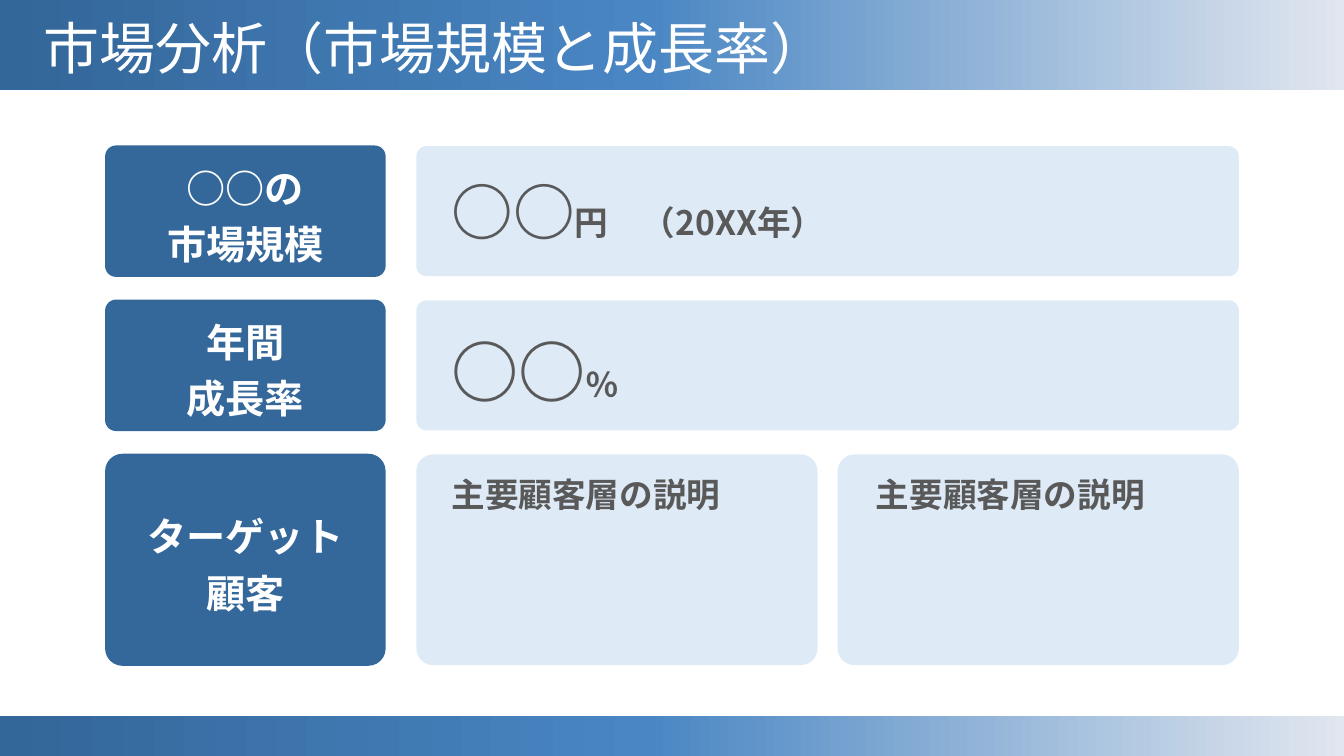
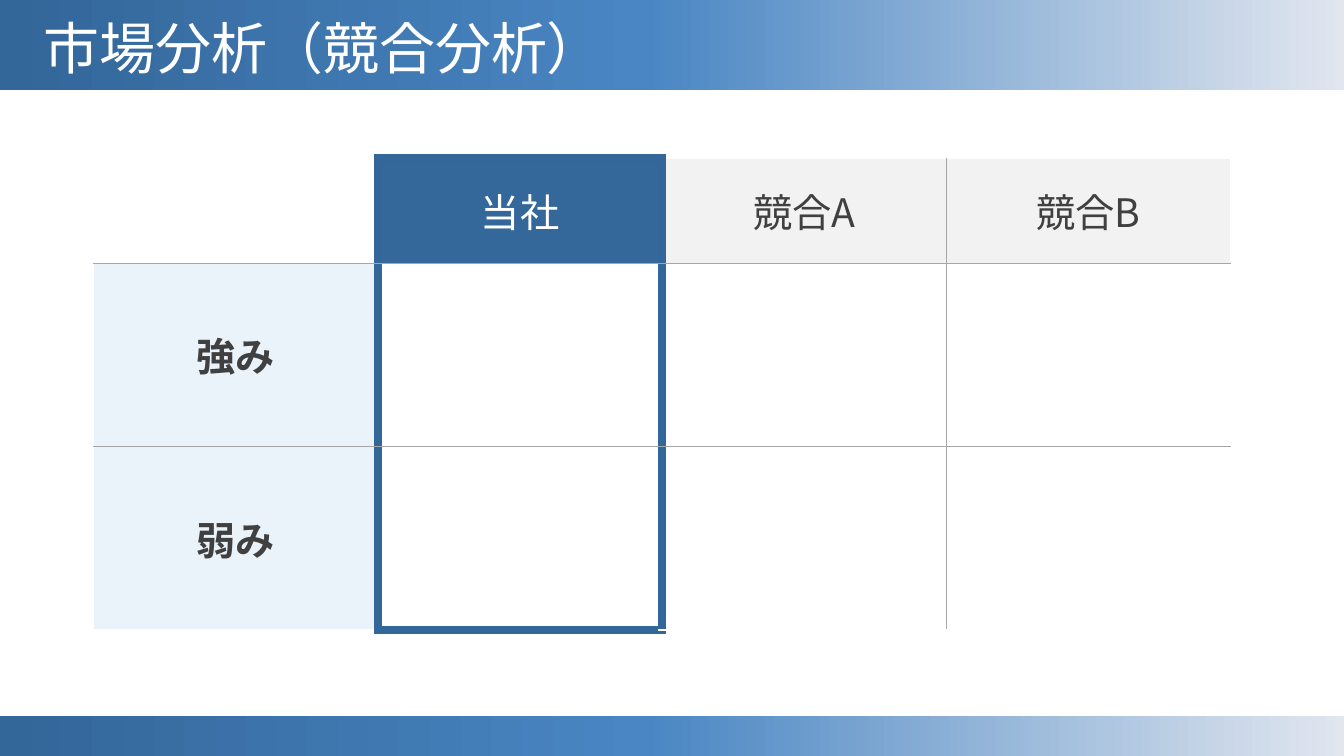
from dataclasses import dataclass
from typing import Any

from lxml.etree import SubElement
from pptx import Presentation
from pptx.dml.color import RGBColor as Rgb
from pptx.enum.lang import MSO_LANGUAGE_ID as Lang
from pptx.enum.shapes import MSO_SHAPE as Form
from pptx.enum.text import MSO_ANCHOR as Anchor, MSO_AUTO_SIZE as Fit, PP_ALIGN as Align
from pptx.oxml.ns import qn
from pptx.shapes.autoshape import Shape
from pptx.slide import Slide
from pptx.table import _Cell as Cell
from pptx.text.text import TextFrame as Frame
from pptx.util import Pt


@dataclass(frozen=True)
class Theme:
    navy: str = "34679A"
    edge: str = "336699"
    pale: str = "DEEBF7"
    tint: str = "EBF3FA"
    mist: str = "F2F2F2"
    white: str = "FFFFFF"
    rule: str = "A6A6A6"
    dark: str = "404040"
    gray: str = "595959"
    fade: tuple[tuple[int, str], ...] = ((0, "336699"), (48, "4986C3"), (100, "E1E6EF"))
    font: str = "Noto Sans CJK JP"
    latin: str = "Montserrat"
    title: int = 40
    label: int = 28
    note: int = 24
    round: float = 0.079


@dataclass(frozen=True)
class Box:
    left: float
    top: float
    width: float
    height: float

    def span(self) -> tuple[int, ...]:
        return tuple(Pt(n) for n in (self.left, self.top, self.width, self.height))


@dataclass(frozen=True)
class Run:
    text: str
    size: int
    color: str
    bold: bool = True
    font: str = Theme.font


@dataclass(frozen=True)
class Note:
    box: Box
    runs: tuple[Run, ...]


@dataclass(frozen=True)
class Row:
    lines: tuple[str, ...]
    height: float
    panes: int
    notes: tuple[Note, ...]


@dataclass(frozen=True)
class Edge:
    color: str
    width: float = 1


T = Theme()
PAGE = Box(0, 0, 960, 540)
BANDS = (Box(0, 0, 960, 64), Box(0, 511.2, 960, 28.8))
HEAD = Box(24, 11, 828, 52)
LABEL_X, LABEL_W = 75.6, 199.4
PANE_X, PANE_W, PANE_GAP = 297.4, 587.5, 14.4
ROW_Y, ROW_GAP = 104.4, 17.2
NOTE_X = PANE_X + 18
HALF = (PANE_W - PANE_GAP) / 2
HINT = (Run("主要顧客層の説明", T.note, T.gray),)
ROWS = (
    Row(("○○の", "市場規模"), 92.9, 1, (
        Note(Box(NOTE_X, 120.2, 445.7, 60.5),
             (Run("○○", 44, T.gray), Run("円　（20XX年）", T.note, T.gray))),)),
    Row(("年間", "成長率"), 92.9, 1, (
        Note(Box(NOTE_X, 231.8, 316, 65.5),
             (Run("○○", 48, T.gray, font=T.latin),
              Run("％", T.note, T.gray, font=T.latin))),)),
    Row(("ターゲット", "顧客"), 150.5, 2, tuple(
        Note(Box(NOTE_X + i * (HALF + PANE_GAP + 2.2), 334.8, 255, 36), HINT)
        for i in range(2))),
)
GRID = Box(67, 113, 812, 337)
TALL = (75, 131, 131)
WORDS = (("", "当社", "競合A", "競合B"), ("強み", "", "", ""), ("弱み", "", "", ""))
THICK, THIN, BARE = Edge(T.edge, 6), Edge(T.rule), Edge(T.white)
UPRIGHT = (BARE, THICK, THICK, THIN, BARE)
LEVEL = (BARE, THIN, THIN, BARE)
OWN = (THICK, THIN, THIN, THICK)


def put(item: Any, look: dict[str, Any]) -> None:
    for name, value in look.items():
        setattr(item, name, value)


def paint(item: Any, color: str) -> None:
    item.fill.solid()
    item.fill.fore_color.rgb = Rgb.from_string(color)


def write(frame: Frame, lines: tuple[tuple[Run, ...], ...], look: dict[str, Any]) -> None:
    for i, line in enumerate(lines):
        para = frame.add_paragraph() if i else frame.paragraphs[0]
        put(para, look)
        for part in line:
            run = para.add_run()
            run.text = part.text
            put(run.font, {"size": Pt(part.size), "bold": part.bold, "name": part.font,
                           "language_id": Lang.JAPANESE})
            run.font.color.rgb = Rgb.from_string(part.color)
            SubElement(run._r.get_or_add_rPr(), qn("a:ea"), typeface=T.font)


def add_text(slide: Slide, box: Box, runs: tuple[Run, ...], look: dict[str, Any]) -> None:
    frame = slide.shapes.add_textbox(*box.span()).text_frame
    put(frame, {"word_wrap": True, "auto_size": Fit.SHAPE_TO_FIT_TEXT,
                "vertical_anchor": Anchor.MIDDLE})
    write(frame, (runs,), look)


def add_form(slide: Slide, box: Box, form: Form) -> Shape:
    shape = slide.shapes.add_shape(form, *box.span())
    shape.shadow.inherit = False
    shape.line.fill.background()
    return shape


def add_card(slide: Slide, box: Box, color: str) -> Shape:
    card = add_form(slide, box, Form.ROUNDED_RECTANGLE)
    card.adjustments[0] = T.round
    paint(card, color)
    return card


def add_label(slide: Slide, box: Box, lines: tuple[str, ...]) -> None:
    card = add_card(slide, box, T.navy)
    card.line.color.rgb = Rgb.from_string(T.edge)
    card.line.width = Pt(1)
    put(card.text_frame, {"word_wrap": True, "vertical_anchor": Anchor.MIDDLE})
    runs = tuple((Run(line, T.label, T.white),) for line in lines)
    write(card.text_frame, runs, {"alignment": Align.CENTER, "line_spacing": 1.2})


def add_band(slide: Slide, box: Box) -> None:
    band = add_form(slide, box, Form.RECTANGLE)
    band.fill.gradient()
    band.fill.gradient_angle = 0
    stops = band._element.spPr.find(qn("a:gradFill")).find(qn("a:gsLst"))
    for stop in list(stops):
        stops.remove(stop)
    for place, color in T.fade:
        stop = SubElement(stops, qn("a:gs"), pos=str(place * 1000))
        SubElement(stop, qn("a:srgbClr"), val=color)


def add_page(deck: Any, title: str) -> Slide:
    slide = deck.slides.add_slide(deck.slide_layouts[6])
    for box in BANDS:
        add_band(slide, box)
    add_text(slide, HEAD, (Run(title, T.title, T.white, False),), {"line_spacing": 0.9})
    return slide


def add_edge(cell: Cell, side: str, edge: Edge) -> None:
    line = SubElement(cell._tc.get_or_add_tcPr(), qn(f"a:ln{side}"), w=str(Pt(edge.width)))
    fill = SubElement(line, qn("a:solidFill"))
    SubElement(fill, qn("a:srgbClr"), val=edge.color)


def tone(row: int, col: int) -> tuple[str, str]:
    if row and not col:
        return T.tint, T.dark
    if row or not col:
        return T.white, T.dark
    return (T.navy, T.white) if col == 1 else (T.mist, T.dark)


def draw_size(deck: Any) -> None:
    slide = add_page(deck, "市場分析（市場規模と成長率）")
    top = ROW_Y
    for row in ROWS:
        width = (PANE_W - PANE_GAP * (row.panes - 1)) / row.panes
        for i in range(row.panes):
            left = PANE_X + i * (width + PANE_GAP)
            add_card(slide, Box(left, top, width, row.height), T.pale)
        add_label(slide, Box(LABEL_X, top, LABEL_W, row.height), row.lines)
        for note in row.notes:
            add_text(slide, note.box, note.runs, {"space_before": Pt(10)})
        top += row.height + ROW_GAP


def draw_rivals(deck: Any) -> None:
    slide = add_page(deck, "市場分析（競合分析）")
    table = slide.shapes.add_table(len(WORDS), len(WORDS[0]), *GRID.span()).table
    put(table, {"first_row": False, "horz_banding": False})
    for row, height in zip(table.rows, TALL):
        row.height = Pt(height)
    for r, words in enumerate(WORDS):
        for c, word in enumerate(words):
            cell = table.cell(r, c)
            flat = OWN if c == 1 else LEVEL
            sides = {"L": UPRIGHT[c], "R": UPRIGHT[c + 1], "T": flat[r], "B": flat[r + 1]}
            for side, edge in sides.items():
                add_edge(cell, side, edge)
            fill, ink = tone(r, c)
            paint(cell, fill)
            cell.vertical_anchor = Anchor.MIDDLE
            if word:
                write(cell.text_frame, ((Run(word, T.label, ink, r > 0),),),
                      {"alignment": Align.CENTER})


def main() -> None:
    deck = Presentation()
    put(deck, {"slide_width": Pt(PAGE.width), "slide_height": Pt(PAGE.height)})
    draw_size(deck)
    draw_rivals(deck)
    deck.save("out.pptx")


if __name__ == "__main__":
    main()
